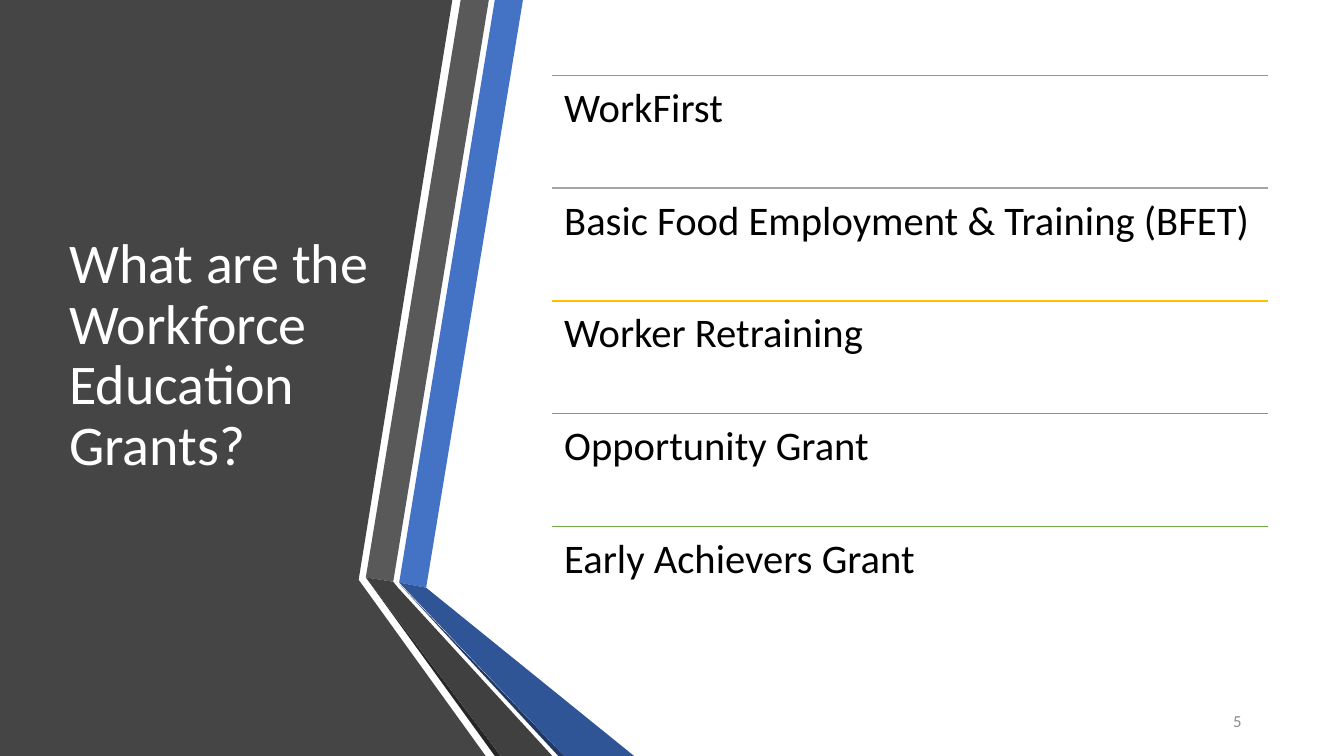
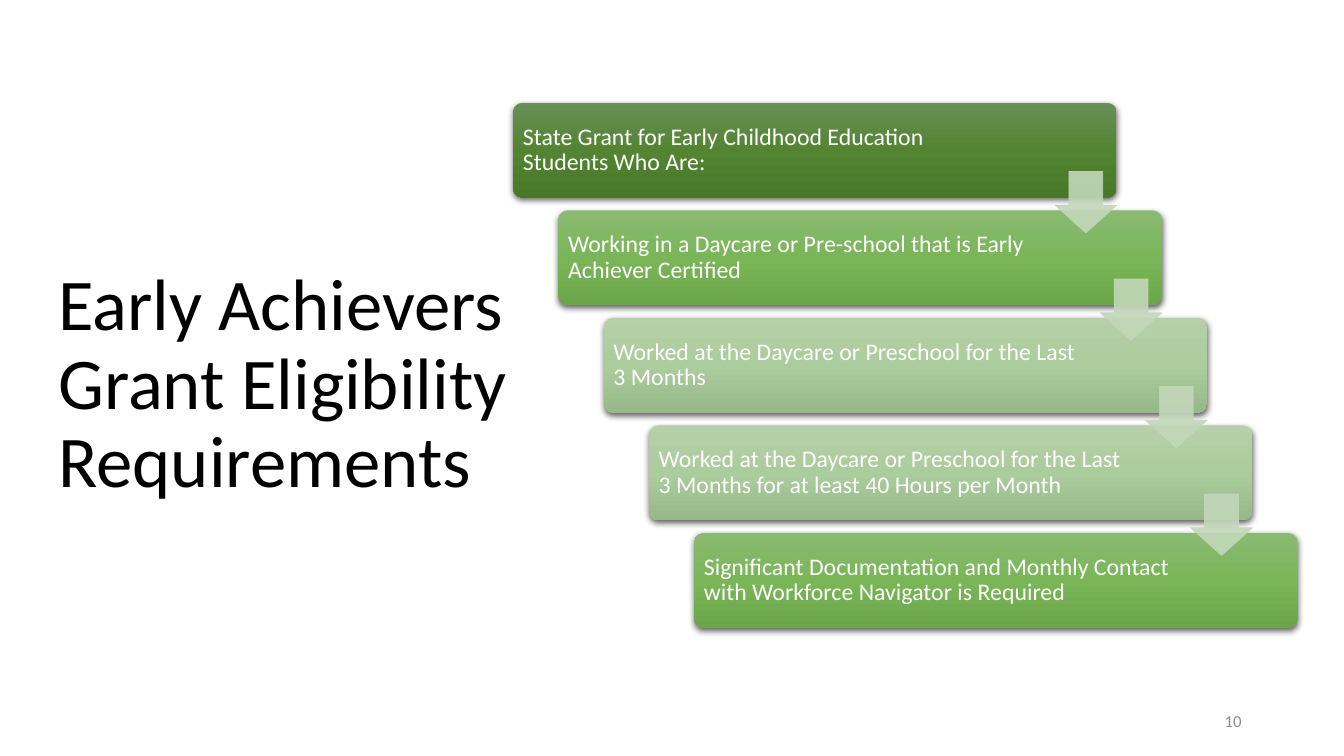
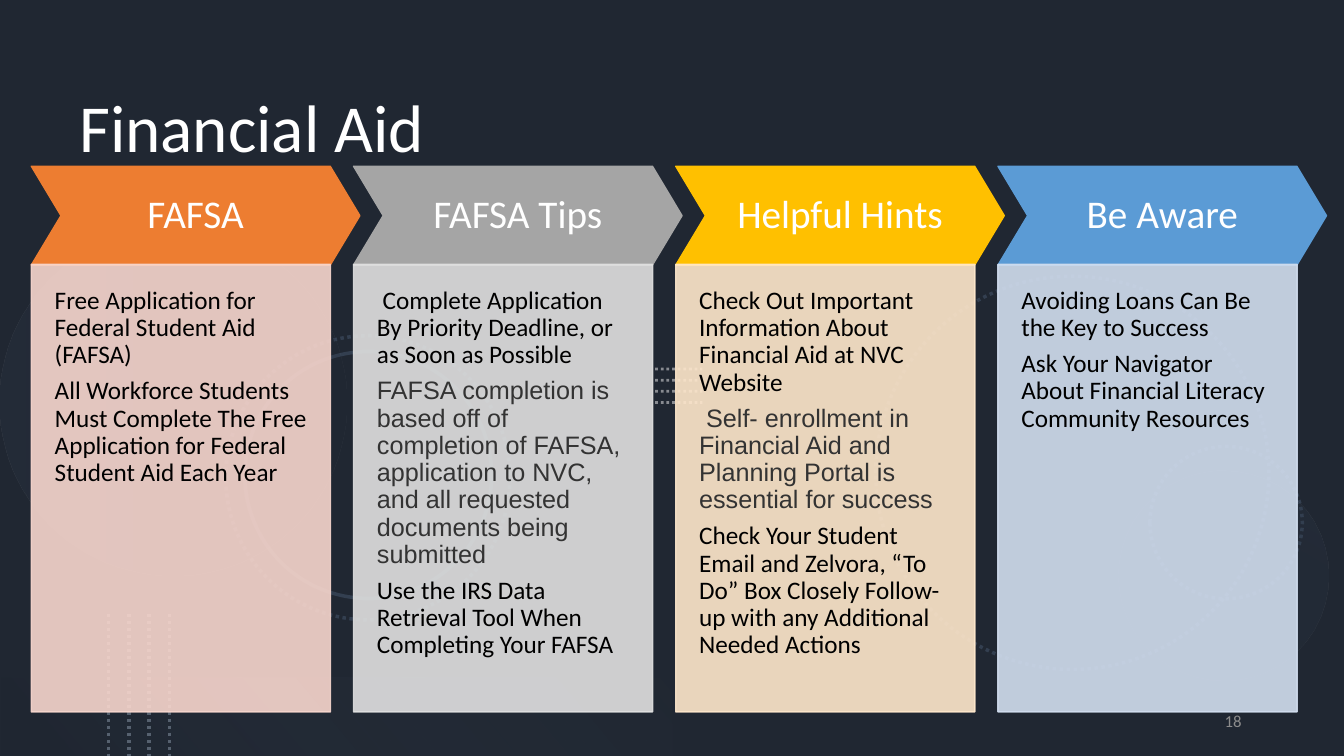
"""Builds three slides about workforce education grants."""
from lxml import etree
from pptx import Presentation, util as u
from pptx.dml.color import RGBColor
from pptx.enum import dml, shapes, text
from pptx.oxml import ns

SHAPE, DOT = shapes.MSO_SHAPE, dml.MSO_LINE.ROUND_DOT
TOP, MIDDLE = text.MSO_ANCHOR.TOP, text.MSO_ANCHOR.MIDDLE
LEFT, CENTER, RIGHT = text.PP_ALIGN.LEFT, text.PP_ALIGN.CENTER, text.PP_ALIGN.RIGHT
WIDTH, HEIGHT = 33.87, 19.05
WHITE, BLACK, MUTED, BODY = "FFFFFF", "000000", "8C8C8C", "333333"
ORANGE, GREY, GOLD, SKY, GREEN = "ED7D31", "A5A5A5", "FFC000", "5B9BD5", "70AD47"
NIGHT, SLATE, STEEL = "202732", "333F50", "56616F"
INSETS = (0.25, 0.13, 0.25, 0.13)

RIBBONS = [
    ("454545", [(0, 0), (11.4, 0), (9.04, 14.61), (12.24, HEIGHT), (0, HEIGHT)]),
    ("4472C4", [(10.06, 14.68), (10.74, 14.81), (13.18, 0), (12.47, 0)]),
    ("595959", [(12.32, 0), (11.61, 0), (9.22, 14.55), (9.91, 14.66)]),
    ("262626", [(9.22, 14.55), (12.47, HEIGHT), (12.62, HEIGHT)]),
    ("203864", [(10.06, 14.71), (14.07, HEIGHT), (14.22, HEIGHT)]),
    ("2F5597", [(10.06, 14.68), (14.22, HEIGHT), (15.98, HEIGHT), (10.74, 14.81)]),
    ("404040", [(13.92, HEIGHT), (10.03, 14.81), (9.91, 14.66), (9.22, 14.55),
                (12.62, HEIGHT)]),
]
GRANTS = [
    (ORANGE, "WorkFirst"),
    (GREY, "Basic Food Employment & Training (BFET)"),
    (GOLD, "Worker Retraining"),
    (SKY, "Opportunity Grant"),
    (GREEN, "Early Achievers Grant"),
]
DARK = [(0, "6A8F57", 100), (50, "528431", 100), (100, "487828", 100)]
MID = [(0, "8ABA72", 100), (50, "7AB658", 100), (100, "6BA64A", 100)]
PALE = [(0, "B6D0AA", 100), (50, "ABCC9C", 100), (100, "97B888", 100)]
STEPS = [
    (DARK, "State Grant for Early Childhood Education Students Who Are:"),
    (MID, "Working in a Daycare or Pre-school that is Early Achiever Certified"),
    (PALE, "Worked at the Daycare or Preschool for the Last 3 Months"),
    (PALE, "Worked at the Daycare or Preschool for the Last 3 Months for at least "
           "40 Hours per Month"),
    (MID, "Significant Documentation and Monthly Contact with Workforce Navigator "
          "is Required"),
]
PLAIN, NOTE = ("Calibri", BLACK), ("Arial", BODY)
CARDS = [
    ("FAFSA", ORANGE, "F8D7CE", [
        (PLAIN, "Free Application for Federal Student Aid (FAFSA)"),
        (PLAIN, "All Workforce Students Must Complete The Free Application for "
                "Federal Student Aid Each Year")]),
    ("FAFSA Tips", GREY, "E1E1E1", [
        (PLAIN, " Complete Application By Priority Deadline, or as Soon as Possible"),
        (NOTE, "FAFSA completion is based off of completion of FAFSA, application "
               "to NVC, and all requested documents being submitted"),
        (PLAIN, "Use the IRS Data Retrieval Tool When Completing Your FAFSA")]),
    ("Helpful Hints", GOLD, "FFE8CC", [
        (PLAIN, "Check Out Important Information About Financial Aid at NVC Website"),
        (NOTE, " Self- enrollment in Financial Aid and Planning Portal is essential "
               "for success"),
        (PLAIN, "Check Your Student Email and Zelvora, “To Do” Box Closely Follow-up "
                "with any Additional Needed Actions")]),
    ("Be Aware", SKY, "D2DEEF", [
        (PLAIN, "Avoiding Loans Can Be the Key to Success"),
        (PLAIN, "Ask Your Navigator About Financial Literacy Community Resources")]),
]
RINGS = [(22.07, 6.96, 9.91, DOT), (28.98, 11.25, 3.84, DOT),
         (5.69, 8.46, 7.16, DOT), (6.17, 8.86, 6.22, None)]


def rgb(color):
    """Turn a hex string into a colour."""
    return RGBColor.from_string(color)


def child(parent, tag, **attrs):
    """Append an XML element with the given attributes."""
    return etree.SubElement(parent, ns.qn(tag), {k: str(v) for k, v in attrs.items()})


def fade(holder, alpha):
    """Set the opacity, in percent, of the solid colour inside an element."""
    clr = holder.find(".//" + ns.qn("a:srgbClr"))
    child(clr, "a:alpha", val=alpha * 1000)


def stroke(line, color, width, dash=None):
    """Style an outline or a connector."""
    line.color.rgb = rgb(color)
    line.width = u.Pt(width)
    if dash:
        line.dash_style = dash


def gradient(sp, stops, angle=90):
    """Fill a shape with a clockwise linear gradient."""
    sp.fill.gradient()
    sp.fill.gradient_angle = 360 - angle
    stop_list = sp._element.spPr.find(".//" + ns.qn("a:gsLst"))
    for old in list(stop_list):
        stop_list.remove(old)
    for pos, color, alpha in stops:
        clr = child(child(stop_list, "a:gs", pos=pos * 1000), "a:srgbClr", val=color)
        child(clr, "a:alpha", val=alpha * 1000)


def drop_shadow(sp):
    """Give a shape a soft shadow below it."""
    effects = sp._element.spPr.find(ns.qn("a:effectLst"))
    shadow = child(effects, "a:outerShdw", blurRad=u.Pt(4.5), dist=u.Pt(1.5),
                   dir=5400000, algn="ctr", rotWithShape=0)
    child(child(shadow, "a:srgbClr", val=BLACK), "a:alpha", val=63000)


def add_shape(s, kind, box, fill=None, line=None, alpha=100, adj=()):
    """Add a preset shape with a flat fill and an optional (colour, width) outline."""
    sp = s.shapes.add_shape(kind, *map(u.Cm, box))
    sp.shadow.inherit = False
    for i, value in enumerate(adj):
        sp.adjustments[i] = value
    if fill:
        sp.fill.solid()
        sp.fill.fore_color.rgb = rgb(fill)
        fade(sp._element.spPr.find(ns.qn("a:solidFill")), alpha)
    else:
        sp.fill.background()
    if line:
        stroke(sp.line, *line)
        fade(sp._element.spPr.find(ns.qn("a:ln")), alpha)
    else:
        sp.line.fill.background()
    return sp


def add_line(s, start, end, color, width, dash=None, alpha=100):
    """Add a straight line without a shadow."""
    ends = map(u.Cm, (*start, *end))
    cn = s.shapes.add_connector(shapes.MSO_CONNECTOR.STRAIGHT, *ends)
    stroke(cn.line, color, width, dash)
    spPr = cn._element.spPr
    fade(spPr.find(ns.qn("a:ln")), alpha)
    child(spPr, "a:effectLst")


def add_polygon(s, points, color):
    """Add a closed flat outline."""
    first, *rest = [(u.Cm(x), u.Cm(y)) for x, y in points]
    builder = s.shapes.build_freeform(*first)
    builder.add_line_segments(rest, close=True)
    sp = builder.convert_to_shape()
    sp.shadow.inherit = False
    sp.fill.solid()
    sp.fill.fore_color.rgb = rgb(color)
    sp.line.fill.background()


def write(sp, paragraphs, size, anchor=MIDDLE, align=LEFT, insets=INSETS,
          spacing=0.9, after=0.35):
    """Write ((font, colour), words) paragraphs into a shape."""
    tf = sp.text_frame
    tf.word_wrap = True
    tf.vertical_anchor = anchor
    tf.margin_left, tf.margin_top, tf.margin_right, tf.margin_bottom = map(u.Cm, insets)
    for i, ((font, color), words) in enumerate(paragraphs):
        p = tf.add_paragraph() if i else tf.paragraphs[0]
        p.alignment = align
        p.line_spacing = spacing
        p.space_after = u.Pt(size * after)
        r = p.add_run()
        r.text = words
        r.font.name = font
        r.font.size = u.Pt(size)
        r.font.color.rgb = rgb(color)


def add_text(s, box, words, size, color, **style):
    """Add a text box with one paragraph."""
    sp = s.shapes.add_textbox(*map(u.Cm, box))
    write(sp, [(("Calibri", color), words)], size, **style)


def add_title(s, box, words, size, color, anchor=MIDDLE):
    """Add the slide title."""
    add_text(s, box, words, size, color, anchor=anchor, after=0)


def add_number(s, number):
    """Add the slide number at the bottom right."""
    add_text(s, (23.92, 17.66, 7.62, 1.01), str(number), 12, MUTED,
             align=RIGHT, spacing=1.0, after=0)


def new_slide(prs, background=WHITE):
    """Add a blank slide with a flat background."""
    s = prs.slides.add_slide(prs.slide_layouts[6])
    s.background.fill.solid()
    s.background.fill.fore_color.rgb = rgb(background)
    return s


def add_grants(prs):
    """Build the list of grants beside the folded ribbons."""
    s = new_slide(prs)
    for color, points in RIBBONS:
        add_polygon(s, points, color)
    add_title(s, (1.5, 1.9, 8.89, 14.17), "What are the Workforce Education Grants?",
              40, WHITE)
    left, width, pitch = 13.92, 18.03, 2.84
    for i, (color, name) in enumerate(GRANTS):
        top = 1.9 + i * pitch
        add_line(s, (left, top), (left + width, top), color, 1)
        add_text(s, (left, top, width, pitch), name, 29, BLACK,
                 anchor=TOP, insets=(0.3,) * 4)
    add_number(s, 5)


def add_eligibility(prs):
    """Build the staircase of requirements."""
    s = new_slide(prs)
    add_title(s, (1.22, 2.39, 12.67, 14.66),
              "Early Achievers Grant Eligibility Requirements", 52, BLACK)
    dx, dy = 1.14, 2.71
    for i, (stops, words) in enumerate(STEPS):
        sp = add_shape(s, SHAPE.ROUNDED_RECTANGLE,
                       (12.93 + i * dx, 2.59 + i * dy, 15.21, 2.39), adj=[0.1])
        gradient(sp, stops)
        drop_shadow(sp)
        write(sp, [(("Calibri", WHITE), words)], 17, insets=(0.18, 0.18, 2.88, 0.18))
    for i in range(len(STEPS) - 1):
        add_shape(s, SHAPE.DOWN_ARROW, (26.59 + i * dx, 4.32 + i * dy, 1.55, 1.55),
                  "C2D7B9", ("C2D7B9", 0.5), alpha=90, adj=[0.55, 0.45])
    add_number(s, 10)


def add_backdrop(s):
    """Draw the faint circles and dotted lines behind the cards."""
    for x, y, size, dash in RINGS:
        add_shape(s, SHAPE.OVAL, (x, y, size, size), line=(SLATE, 2.5, dash))
    glows = [
        (SHAPE.OVAL, (0, 5.77, 8.74, 8.74), 270, 90, [(0, SLATE, 20), (100, "222A35", 10)]),
        (SHAPE.OVAL, (28.19, 11.86, 5.28, 5.28), 210, 90, [(0, SLATE, 10), (100, SLATE, 20)]),
        (SHAPE.RECTANGLE, (0, 17.07, 16.94, 1.98), 180, 140,
         [(10, "222A35", 10), (100, "8497B0", 0)]),
    ]
    for kind, box, turn, angle, stops in glows:
        sp = add_shape(s, kind, box)
        sp.rotation = turn
        gradient(sp, stops, angle)
    for i in range(4):
        x, y = 2.74 + i * 0.51, 9.3 + i * 0.28
        add_line(s, (x, 15.47), (x, HEIGHT), STEEL, 2.5, DOT)
        add_line(s, (16.51, y), (17.7, y), "F1F0F0", 2, DOT, alpha=50)


def add_financial_aid(prs):
    """Build the four cards headed by chevrons."""
    s = new_slide(prs, NIGHT)
    add_backdrop(s)
    add_title(s, (1.75, 2.24, 14.2, 14.78), "Financial Aid", 48, WHITE, anchor=TOP)
    for i, (heading, color, tint, paragraphs) in enumerate(CARDS):
        x = 0.79 + i * 8.12
        sp = add_shape(s, SHAPE.CHEVRON, (x, 4.19, 8.28, 2.49), color, (color, 1), adj=[0.3])
        write(sp, [(("Calibri", WHITE), heading)], 28, align=CENTER, insets=(0.3,) * 4)
        sp = add_shape(s, SHAPE.RECTANGLE, (x, 6.66, 7.54, 11.28), tint, (tint, 1), alpha=90)
        write(sp, paragraphs, 18, anchor=TOP, insets=(0.59, 0.59, 0.59, 1.19))
    add_number(s, 18)


def main():
    """Build and save the presentation."""
    prs = Presentation()
    prs.slide_width, prs.slide_height = u.Cm(WIDTH), u.Cm(HEIGHT)
    add_grants(prs)
    add_eligibility(prs)
    add_financial_aid(prs)
    prs.save("out.pptx")


if __name__ == "__main__":
    main()
